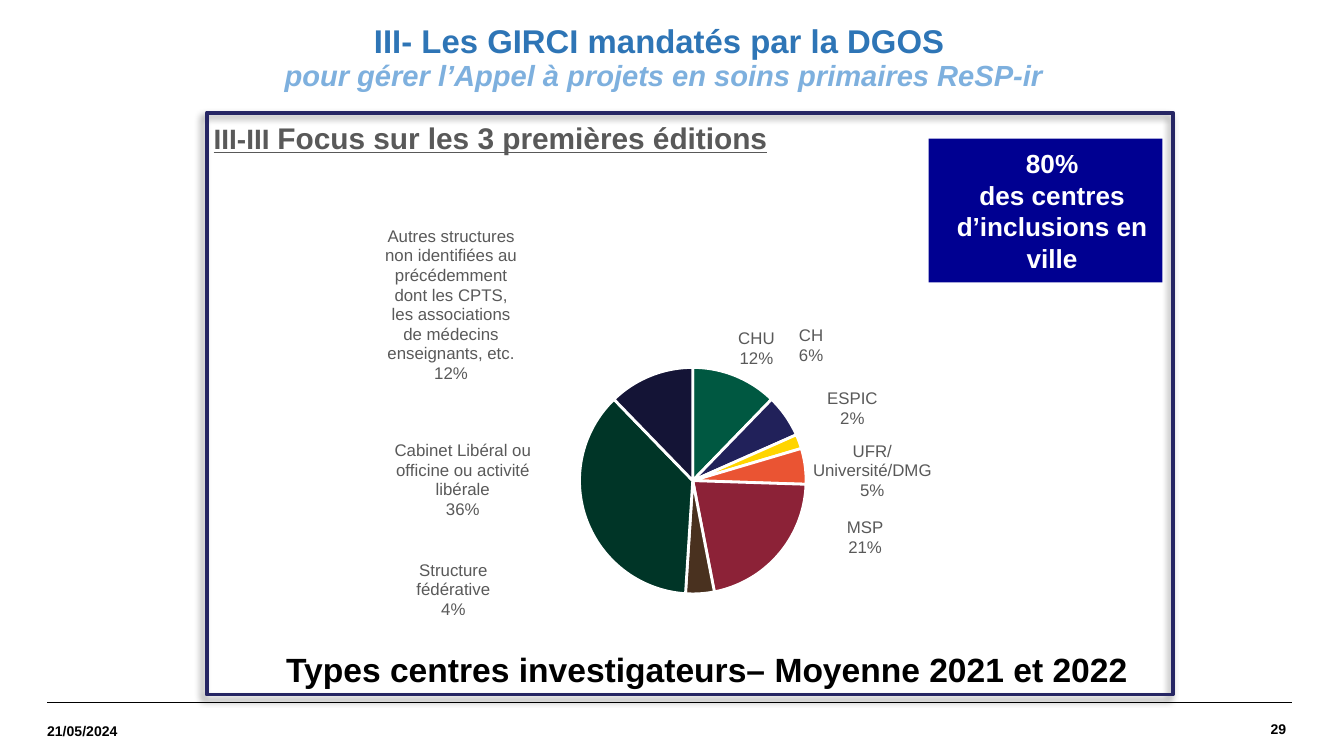
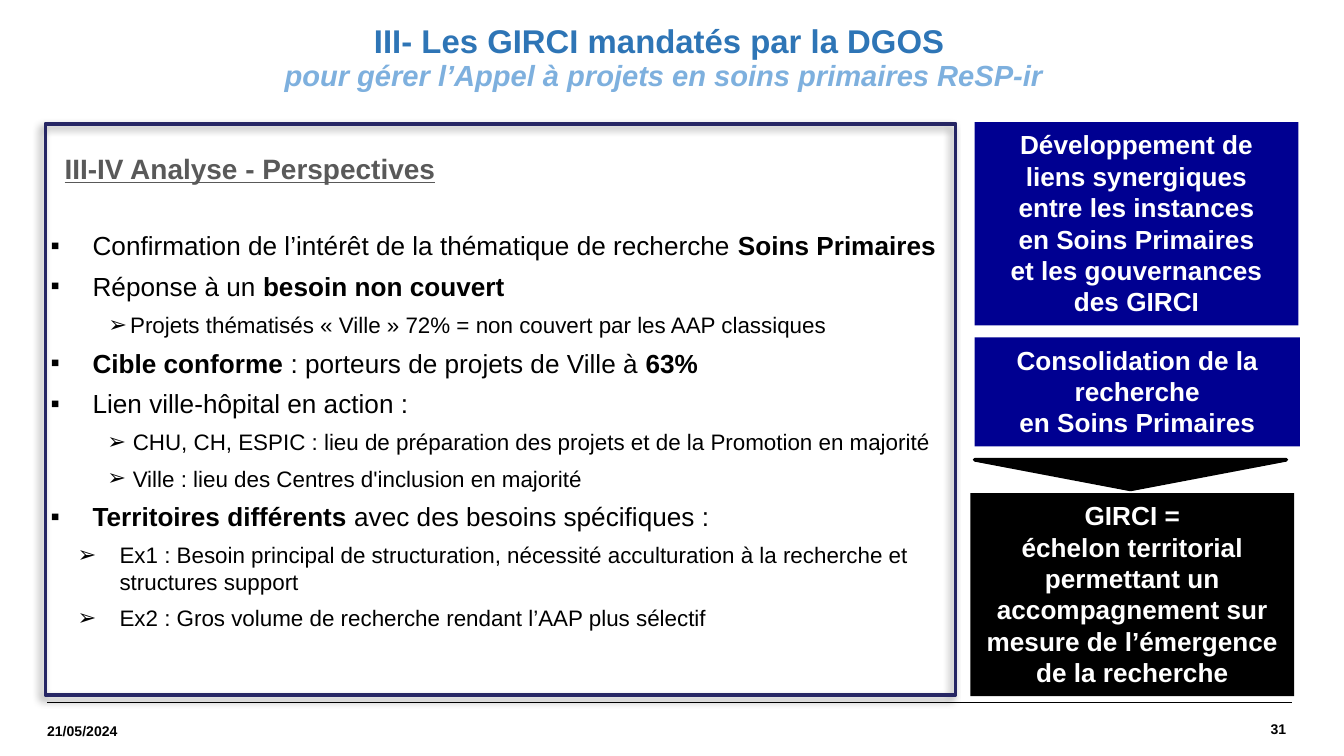
from copy import deepcopy

from lxml import etree
from pptx import Presentation
from pptx.chart.data import CategoryChartData
from pptx.dml.color import RGBColor
from pptx.enum.chart import XL_CHART_TYPE as ChartType, XL_LABEL_POSITION as LabelPosition
from pptx.enum.shapes import MSO_CONNECTOR as Connector, MSO_SHAPE as Preset
from pptx.enum.text import MSO_ANCHOR as Anchor, PP_ALIGN as Align
from pptx.oxml import parse_xml
from pptx.oxml.ns import nsdecls, qn
from pptx.util import Cm, Pt

FONT = "Arial"
COLORS = {
    "black": "000000",
    "white": "FFFFFF",
    "grey": "595959",
    "title": "2E75B6",
    "subtitle": "7EB0DE",
    "frame": "262664",
    "navy": "000091",
}
TITLE = "III- Les GIRCI mandatés par la DGOS "
SUBTITLE = "pour gérer l’Appel à projets en soins primaires ReSP-ir"
DATE = "21/05/2024"

# name, share, slice colour, label shift as fractions of the chart
CENTRES = [
    ("CHU", 12, "005841", None),
    ("CH", 6, "21215A", (0.01, -0.09)),
    ("ESPIC", 2, "FFD500", (0.03, -0.02)),
    ("UFR/Université/DMG", 5, "EA5433", (0, 0.07)),
    ("MSP", 21, "8C2237", (0.09, -0.08)),
    ("Structure fédérative", 4, "49311F", (-0.36, -0.08)),
    ("Cabinet Libéral ou officine ou activité libérale", 36, "003527", (-0.07, -0.16)),
    ("Autres structures non identifiées au précédemment dont les CPTS, "
     "les associations de médecins enseignants, etc.", 12, "141436", (-0.19, 0.03)),
]
PIE_AREA = {"x": 0.37, "y": 0.38, "w": 0.33, "h": 0.45}

# bullet, left margin, first-line indent, size
LEVELS = {
    "point": ("▪", 1.04, -0.79, 14),
    "figure": ("➢", 1.75, -0.41, 12),
    "detail": ("➢", 1.8, -0.48, 12),
    "example": ("➢", 1.55, -0.79, 12),
}
ANALYSIS = [
    ("point", "Confirmation de l’intérêt de la thématique de recherche **Soins Primaires**"),
    ("point", "Réponse à un **besoin non couvert**"),
    ("figure", "Projets thématisés « Ville » 72% = non couvert par les AAP classiques"),
    ("point", "**Cible conforme **: porteurs de projets de Ville à **63%**"),
    ("point", "Lien ville-hôpital en action :"),
    ("detail", "CHU, CH, ESPIC : lieu de préparation des projets et de la Promotion en majorité"),
    ("detail", "Ville : lieu des Centres d'inclusion en majorité"),
    ("point", "**Territoires différents **avec des besoins spécifiques :"),
    ("example", "Ex1 : Besoin principal de structuration, nécessité acculturation "
                "à la recherche et structures support"),
    ("example", "Ex2 : Gros volume de recherche rendant l’AAP plus sélectif"),
]


def rgb(name):
    """Return the colour for a name of the palette or a hex string."""
    return RGBColor.from_string(COLORS.get(name, name))


def style_font(font, size, color, bold=False):
    """Set the face, size, colour and weight of a font."""
    font.name = FONT
    font.size = Pt(size)
    font.bold = bold
    font.color.rgb = rgb(color)


def set_indent(paragraph, margin, indent):
    """Set the left margin and first-line indent, in centimetres."""
    properties = paragraph._p.get_or_add_pPr()
    properties.set("marL", str(Cm(margin)))
    properties.set("indent", str(Cm(indent)))


def write_bold(shape, text, size, color, align=Align.LEFT):
    """Fill a shape with bold paragraphs, one for each line."""
    shape.text_frame.text = text
    for paragraph in shape.text_frame.paragraphs:
        paragraph.alignment = align
        for run in paragraph.runs:
            style_font(run.font, size, color, bold=True)


def add_text_box(slide, box, wrap=True, margin=None):
    """Add an empty text box, optionally with equal margins."""
    shape = slide.shapes.add_textbox(*map(Cm, box))
    frame = shape.text_frame
    frame.word_wrap = wrap
    if margin is not None:
        frame.margin_left = frame.margin_right = Cm(margin)
        frame.margin_top = frame.margin_bottom = Cm(margin)
    return shape


def add_preset(slide, preset, box, fill=None, line=None):
    """Add a preset shape without shadow, with 2 pt line if any."""
    shape = slide.shapes.add_shape(preset, *map(Cm, box))
    shape.shadow.inherit = False
    if fill:
        shape.fill.solid()
        shape.fill.fore_color.rgb = rgb(fill)
    else:
        shape.fill.background()
    if line:
        shape.line.color.rgb = rgb(line)
        shape.line.width = Pt(2)
    else:
        shape.line.fill.background()
    return shape


def add_callout(slide, box, text, fill="navy", anchor=Anchor.TOP):
    """Add a filled box with white centred text."""
    shape = add_preset(slide, Preset.RECTANGLE, box, fill)
    write_bold(shape, text, 14, "white", Align.CENTER)
    shape.text_frame.word_wrap = True
    shape.text_frame.vertical_anchor = anchor
    return shape


def add_frame(slide, box):
    """Add the outlined frame with its soft shadow."""
    shape = add_preset(slide, Preset.RECTANGLE, box, line="frame")
    shape._element.spPr.find(qn("a:effectLst")).append(parse_xml(
        f'<a:outerShdw {nsdecls("a")} blurRad="{Pt(4)}" dist="{Pt(3)}" dir="8100000">'
        f'<a:srgbClr val="{COLORS["black"]}"><a:alpha val="40000"/></a:srgbClr>'
        '</a:outerShdw>'))


def add_section_heading(slide, box, text, sizes):
    """Add an underlined heading, its parts split at the bar."""
    shape = add_text_box(slide, box, wrap=False)
    paragraph = shape.text_frame.paragraphs[0]
    set_indent(paragraph, 0.03, 0.23)
    for part, size in zip(text.split("|"), sizes):
        run = paragraph.add_run()
        run.text = part
        style_font(run.font, size, "grey", bold=True)
        run.font.underline = True


def add_title(slide):
    """Add the two-line title common to the slides."""
    shape = add_text_box(slide, (-0.15, 0.36, 25.4, 2.36))
    write_bold(shape, f"{TITLE}\v{SUBTITLE}", 17.6, "title", Align.CENTER)
    paragraph = shape.text_frame.paragraphs[0]
    paragraph.line_spacing = 0.9
    subtitle = paragraph.runs[-1].font
    style_font(subtitle, 15.6, "subtitle", bold=True)
    subtitle.italic = True


def add_footer(slide, number):
    """Add the rule, the date and the slide number."""
    rule = slide.shapes.add_connector(
        Connector.STRAIGHT, Cm(0.89), Cm(13.28), Cm(24.41), Cm(13.28))
    rule.line.color.rgb = rgb("black")
    rule.line.width = Pt(0.8)
    etree.SubElement(rule._element.spPr, qn("a:effectLst"))
    for box, text, align in (
        ((20.55, 13.28, 3.76, 0.99), str(number), Align.RIGHT),
        ((0.89, 13.34, 3.25, 0.97), DATE, Align.LEFT),
    ):
        shape = add_text_box(slide, box, margin=0)
        shape.text_frame.vertical_anchor = Anchor.MIDDLE
        write_bold(shape, text, 7.5, "black", align)


def manual_layout(extra="", **places):
    """Return a chart layout element with the given places."""
    values = "".join(f'<c:{key} val="{value}"/>' for key, value in places.items())
    return parse_xml(
        f'<c:layout {nsdecls("c")}><c:manualLayout>{extra}{values}</c:manualLayout></c:layout>')


def label_slices(plot):
    """Label each slice with its name and share, shifted where needed."""
    plot.has_data_labels = True
    labels = plot.data_labels
    style_font(labels.font, 9, "grey")
    labels.number_format = '0"%"'
    labels.number_format_is_linked = False
    labels.position = LabelPosition.OUTSIDE_END
    labels.show_category_name = labels.show_value = True
    labels.show_percentage = False
    element = labels._element
    for leader in element.findall(qn("c:showLeaderLines")):
        element.remove(leader)
    etree.SubElement(element, qn("c:separator")).text = "\n"
    settings = list(element)
    etree.SubElement(element, qn("c:showLeaderLines")).set("val", "0")
    series = plot.series[0]._element
    plot._element.remove(element)
    series.find(qn("c:cat")).addprevious(element)
    shifts = [(index, centre[3]) for index, centre in enumerate(CENTRES) if centre[3]]
    for position, (index, (x, y)) in enumerate(shifts):
        label = parse_xml(f'<c:dLbl {nsdecls("c")}><c:idx val="{index}"/></c:dLbl>')
        label.append(manual_layout(x=x, y=y))
        label.extend(deepcopy(settings))
        element.insert(position, label)


def add_centres_pie(slide, box):
    """Add the pie of investigating centres."""
    names, shares, colors, _ = zip(*CENTRES)
    data = CategoryChartData(number_format="0")
    data.categories = names
    data.add_series("Series 1", shares)
    chart = slide.shapes.add_chart(ChartType.PIE, *map(Cm, box), data).chart
    chart.has_title = chart.has_legend = False
    style_font(chart.font, 10, "black")
    plot = chart.plots[0]
    plot.vary_by_categories = True
    for index, color in enumerate(colors):
        slice_format = plot.series[0].points[index].format
        slice_format.fill.solid()
        slice_format.fill.fore_color.rgb = rgb(color)
        slice_format.line.color.rgb = rgb("white")
        slice_format.line.width = Pt(1.5)
    label_slices(plot)
    area = plot._element.getparent()
    for layout in area.findall(qn("c:layout")):
        area.remove(layout)
    modes = ('<c:layoutTarget val="inner"/><c:xMode val="edge"/><c:yMode val="edge"/>')
    area.insert(0, manual_layout(modes, **PIE_AREA))


def add_analysis(slide, box):
    """Add the bulleted analysis, with bold between double stars."""
    frame = add_text_box(slide, box, margin=0).text_frame
    for index, (level, text) in enumerate(ANALYSIS):
        paragraph = frame.add_paragraph() if index else frame.paragraphs[0]
        bullet, margin, indent, size = LEVELS[level]
        set_indent(paragraph, margin, indent)
        paragraph.space_after = Pt(5)
        properties = paragraph._p.get_or_add_pPr()
        etree.SubElement(properties, qn("a:buFont")).set("typeface", FONT)
        etree.SubElement(properties, qn("a:buChar")).set("char", bullet)
        for part, words in enumerate(text.split("**")):
            if words:
                run = paragraph.add_run()
                run.text = words
                style_font(run.font, size, "black", bold=part % 2 == 1)


def build_editions_slide(slide):
    """Build the slide on the first three editions."""
    add_section_heading(slide, (3.53, 2.13, 11.38, 0.94),
                        "III-III |Focus sur les 3 premières éditions", (15, 16))
    add_centres_pie(slide, (6.15, 3.28, 12.98, 9.6))
    caption = add_preset(slide, Preset.RECTANGLE, (5.16, 12.14, 16.56, 1.02), "white")
    write_bold(caption, "Types centres investigateurs– Moyenne 2021 et 2022", 18, "black")
    caption.text_frame.word_wrap = False
    caption.text_frame.vertical_anchor = Anchor.TOP
    share = add_callout(slide, (17.55, 2.62, 4.42, 2.72),
                        "80%\ndes centres d’inclusions en ville", anchor=Anchor.MIDDLE)
    for paragraph in share.text_frame.paragraphs:
        set_indent(paragraph, 0.25, 0)


def build_analysis_slide(slide):
    """Build the slide on analysis and prospects."""
    add_analysis(slide, (0.71, 4.34, 17.2, 8.41))
    add_section_heading(slide, (0.71, 2.74, 8, 0.89), "III-IV Analyse - Perspectives", (15,))
    add_callout(slide, (18.34, 9.32, 6.12, 3.84),
                "GIRCI =\néchelon territorial permettant un accompagnement "
                "sur mesure de l’émergence de la recherche", "black")
    add_callout(slide, (18.42, 2.31, 6.12, 3.84),
                "Développement de liens synergiques\nentre les instances\n"
                "en Soins Primaires\net les gouvernances\ndes GIRCI")
    add_callout(slide, (18.42, 6.38, 6.15, 2.06),
                "Consolidation de la recherche\nen Soins Primaires")
    arrow = add_preset(slide, Preset.ISOSCELES_TRIANGLE, (18.42, 8.69, 5.89, 0.56),
                       "black", "black")
    arrow.rotation = 180


def main():
    """Build and save the presentation."""
    presentation = Presentation()
    presentation.slide_width, presentation.slide_height = Cm(25.4), Cm(14.29)
    for build, number, frame in (
        (build_editions_slide, 29, (3.91, 2.13, 18.26, 11)),
        (build_analysis_slide, 31, (0.86, 2.34, 17.2, 10.8)),
    ):
        slide = presentation.slides.add_slide(presentation.slide_layouts[6])
        build(slide)
        add_footer(slide, number)
        add_title(slide)
        add_frame(slide, frame)
    presentation.save("out.pptx")


if __name__ == "__main__":
    main()
